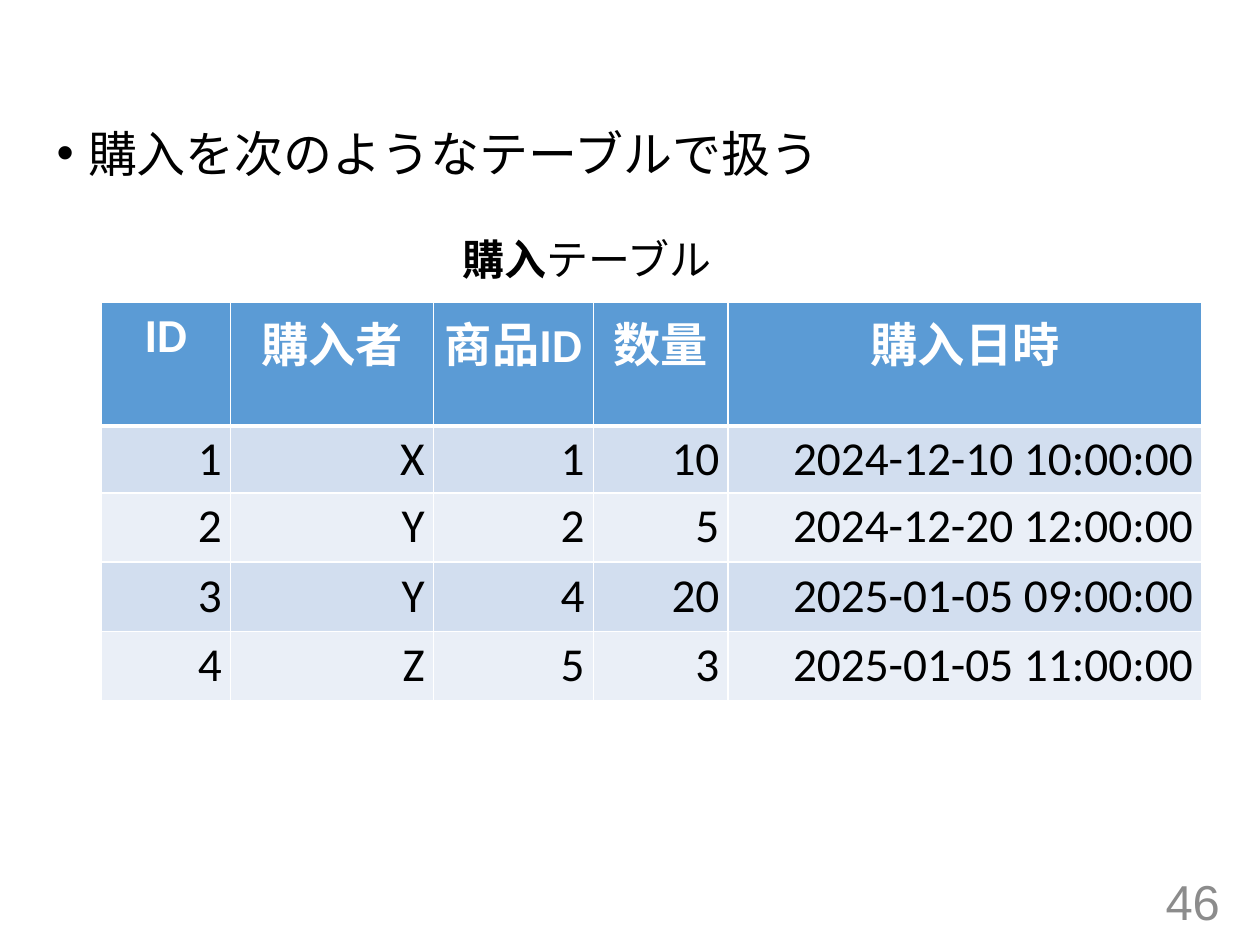
from dataclasses import dataclass

from lxml import etree
from pptx import Presentation
from pptx.dml.color import RGBColor
from pptx.enum import text
from pptx.oxml import ns
from pptx.util import Inches, Pt


@dataclass(frozen=True)
class Theme:
    sans: str = "Arial"
    table_font: str = "Calibri"
    japanese: str = "Noto Sans CJK JP"
    black: str = "000000"
    white: str = "FFFFFF"
    gray: str = "8C8C8C"
    header: str = "5B9BD5"
    bands: tuple[str, str] = ("D2DEEF", "EAEFF7")
    body_size: int = 28
    caption_size: int = 24
    table_size: int = 27


@dataclass(frozen=True)
class Run:
    text: str
    font: str
    size: int
    color: str
    bold: bool = False


@dataclass(frozen=True)
class Label:
    box: tuple[float, float, float, float]
    runs: tuple[Run, ...]
    align: text.PP_ALIGN = text.PP_ALIGN.LEFT
    anchor: text.MSO_ANCHOR = text.MSO_ANCHOR.TOP
    margins: tuple[float, float] = (0.1, 0.05)
    space_before: int = 0
    bullet: str = ""


THEME = Theme()

LABELS = (
    Label((0.35, 0.93, 9.25, 5.83),
          (Run("購入を次のようなテーブルで扱う", THEME.sans, THEME.body_size, THEME.black),),
          space_before=10, bullet="•"),
    Label((7.53, 6.95, 2.25, 0.4),
          (Run("46", THEME.sans, THEME.body_size, THEME.gray),),
          align=text.PP_ALIGN.RIGHT, anchor=text.MSO_ANCHOR.MIDDLE),
    Label((3.6, 1.81, 2.94, 0.48),
          (Run("購入", THEME.japanese, THEME.caption_size, THEME.black, True),
           Run("テーブル", THEME.japanese, THEME.caption_size, THEME.black)),
          margins=(0.07, 0.04), space_before=10),
)

TABLE_BOX = (0.8, 2.4, 8.75, 2.7)
COLUMN_WIDTHS = (1.03, 1.61, 1.27, 1.07, 3.76)
ROW_HEIGHTS = (0.53, 0.53, 0.55, 0.55, 0.55)
PURCHASES = (
    ("ID", "購入者", "商品ID", "数量", "購入日時"),
    ("1", "X", "1", "10", "2024-12-10 10:00:00"),
    ("2", "Y", "2", "5", "2024-12-20 12:00:00"),
    ("3", "Y", "4", "20", "2025-01-05 09:00:00"),
    ("4", "Z", "5", "3", "2025-01-05 11:00:00"),
)


def add_run(p, run: Run) -> None:
    r = p.add_run()
    r.text = run.text
    formats = {"name": run.font, "size": Pt(run.size), "bold": run.bold}
    for name, value in formats.items():
        setattr(r.font, name, value)
    r.font.color.rgb = RGBColor.from_string(run.color)
    # East Asian glyphs take their own typeface
    etree.SubElement(r.font._element, ns.qn("a:ea"), typeface=THEME.japanese)


def set_margins(target, margins: tuple[float, float]) -> None:
    across, down = map(Inches, margins)
    for side, value in {"left": across, "right": across, "top": down, "bottom": down}.items():
        setattr(target, f"margin_{side}", value)


def add_bullet(p, char: str) -> None:
    pPr = p._p.get_or_add_pPr()
    pPr.set("marL", str(Inches(0.25)))
    pPr.set("indent", str(-Inches(0.25)))
    etree.SubElement(pPr, ns.qn("a:buFont"), typeface=THEME.sans)
    etree.SubElement(pPr, ns.qn("a:buChar"), char=char)


def add_label(slide, label: Label) -> None:
    sp = slide.shapes.add_textbox(*map(Inches, label.box))
    tf = sp.text_frame
    tf.word_wrap = True
    tf.vertical_anchor = label.anchor
    set_margins(tf, label.margins)
    p = tf.paragraphs[0]
    p.alignment = label.align
    p.space_before = Pt(label.space_before)
    if label.bullet:
        add_bullet(p, label.bullet)
    for run in label.runs:
        add_run(p, run)


def set_borders(cell, bottom: int, top: int) -> None:
    tcPr = cell._tc.get_or_add_tcPr()
    widths = {"lnL": 1, "lnR": 1, "lnT": top, "lnB": bottom}
    for i, (tag, width) in enumerate(widths.items()):
        ln = etree.Element(ns.qn(f"a:{tag}"), w=str(Pt(width)))
        fill = etree.SubElement(ln, ns.qn("a:solidFill"))
        etree.SubElement(fill, ns.qn("a:srgbClr"), val=THEME.white)
        tcPr.insert(i, ln)


def fill_cell(cell, value: str, row: int) -> None:
    is_header = row == 0
    set_margins(cell, (0.07, 0.04))
    cell.fill.solid()
    cell.fill.fore_color.rgb = RGBColor.from_string(
        THEME.header if is_header else THEME.bands[(row - 1) % 2])
    set_borders(cell, bottom=3 if is_header else 1, top=3 if row == 1 else 1)
    p = cell.text_frame.paragraphs[0]
    p.alignment = text.PP_ALIGN.CENTER if is_header else text.PP_ALIGN.RIGHT
    color = THEME.white if is_header else THEME.black
    add_run(p, Run(value, THEME.table_font, THEME.table_size, color, is_header))


def add_purchase_table(slide) -> None:
    table = slide.shapes.add_table(
        len(PURCHASES), len(COLUMN_WIDTHS), *map(Inches, TABLE_BOX)).table
    for column, width in zip(table.columns, COLUMN_WIDTHS):
        column.width = Inches(width)
    for row, height in zip(table.rows, ROW_HEIGHTS):
        row.height = Inches(height)
    for i, values in enumerate(PURCHASES):
        for j, value in enumerate(values):
            fill_cell(table.cell(i, j), value, i)


def main() -> None:
    prs = Presentation()
    prs.slide_width, prs.slide_height = Inches(10), Inches(7.5)
    slide = prs.slides.add_slide(prs.slide_layouts[6])

    # Statement, page number and table caption
    for label in LABELS:
        add_label(slide, label)

    # Purchases
    add_purchase_table(slide)
    prs.save("out.pptx")


if __name__ == "__main__":
    main()
